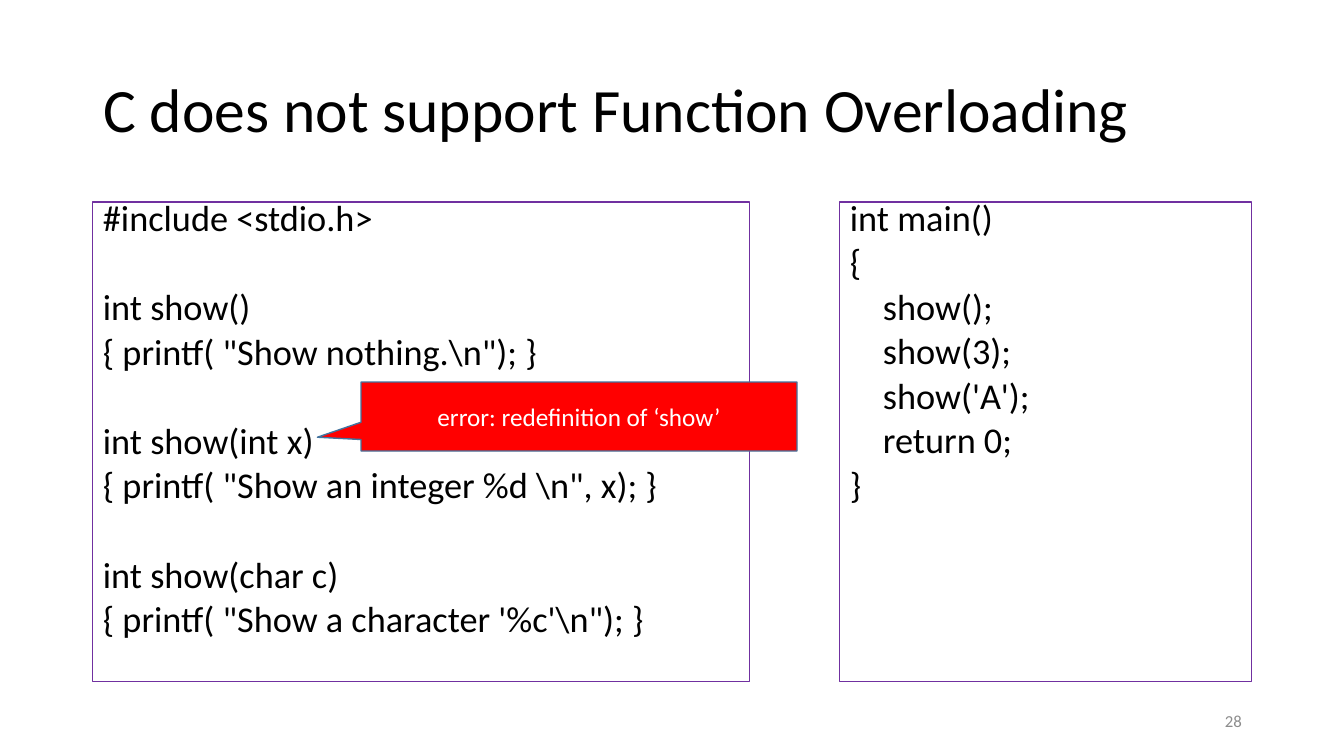
from pptx import Presentation
from pptx.dml.color import RGBColor
from pptx.enum.shapes import MSO_SHAPE as Shape
from pptx.enum.text import MSO_ANCHOR as Anchor, MSO_AUTO_SIZE as AutoSize, PP_ALIGN as Align
from pptx.util import Pt

PX = 914400 / 100.8
COLORS = {"text": "000000", "panel": "7030A0", "number": "8C8C8C",
          "error": "FF0000", "error_line": "43739E", "error_text": "FFFFFF"}


def px(*lengths):
    return [round(length * PX) for length in lengths]


def write(frame, text, size, color="text", align=Align.LEFT, anchor=Anchor.MIDDLE,
          spacing=1.0, before=0, blank=0, indent=0):
    frame.word_wrap = True
    frame.auto_size = AutoSize.NONE
    frame.vertical_anchor = anchor
    gap, first = before, True
    for line in text.split("\n"):
        if not line:
            gap += blank
            continue
        paragraph = frame.paragraphs[0] if first else frame.add_paragraph()
        paragraph.alignment = align
        paragraph.line_spacing = spacing
        paragraph.space_before = Pt(gap)
        if line.startswith("    "):
            paragraph._p.get_or_add_pPr().set("marL", str(px(indent)[0]))
        run = paragraph.add_run()
        run.text = line.strip()
        run.font.name = "Calibri"
        run.font.size = Pt(size)
        run.font.color.rgb = RGBColor.from_string(COLORS[color])
        gap, first = before, False


deck = Presentation()
deck.slide_width, deck.slide_height = px(1344, 756)
slide = deck.slides.add_slide(deck.slide_layouts[5])

title = slide.shapes.title
title.left, title.top, title.width, title.height = px(93, 40, 1159, 146)
write(title.text_frame, "C does not support Function Overloading", 44, spacing=0.9)

definitions = r"""#include <stdio.h>

int show()
{ printf( "Show nothing.\n"); }

int show(int x)
{ printf( "Show an integer %d \n", x); }

int show(char c)
{ printf( "Show a character '%c'\n"); }"""

main_function = """int main()
{
    show();
    show(3);
    show('A');
    return 0;
}"""

for left, width, code in [(93, 657, definitions), (840, 412, main_function)]:
    panel = slide.shapes.add_textbox(*px(left, 202, width, 480))
    panel.line.color.rgb = RGBColor.from_string(COLORS["panel"])
    panel.line.width = Pt(0.75)
    write(panel.text_frame, code, 25.9, anchor=Anchor.TOP,
          spacing=0.7, before=10, blank=32, indent=33)

page_number = slide.shapes.add_textbox(*px(950, 701, 302, 40))
write(page_number.text_frame, "28", 12, color="number", align=Align.RIGHT)

error = slide.shapes.add_shape(Shape.RECTANGULAR_CALLOUT, *px(361, 382, 436, 69))
error.adjustments[0], error.adjustments[1] = -0.6, 0.3
error.shadow.inherit = False
error.fill.solid()
error.fill.fore_color.rgb = RGBColor.from_string(COLORS["error"])
error.line.color.rgb = RGBColor.from_string(COLORS["error_line"])
error.line.width = Pt(1)
write(error.text_frame, "error: redefinition of ‘show’", 18, color="error_text", align=Align.CENTER)

deck.save("out.pptx")
